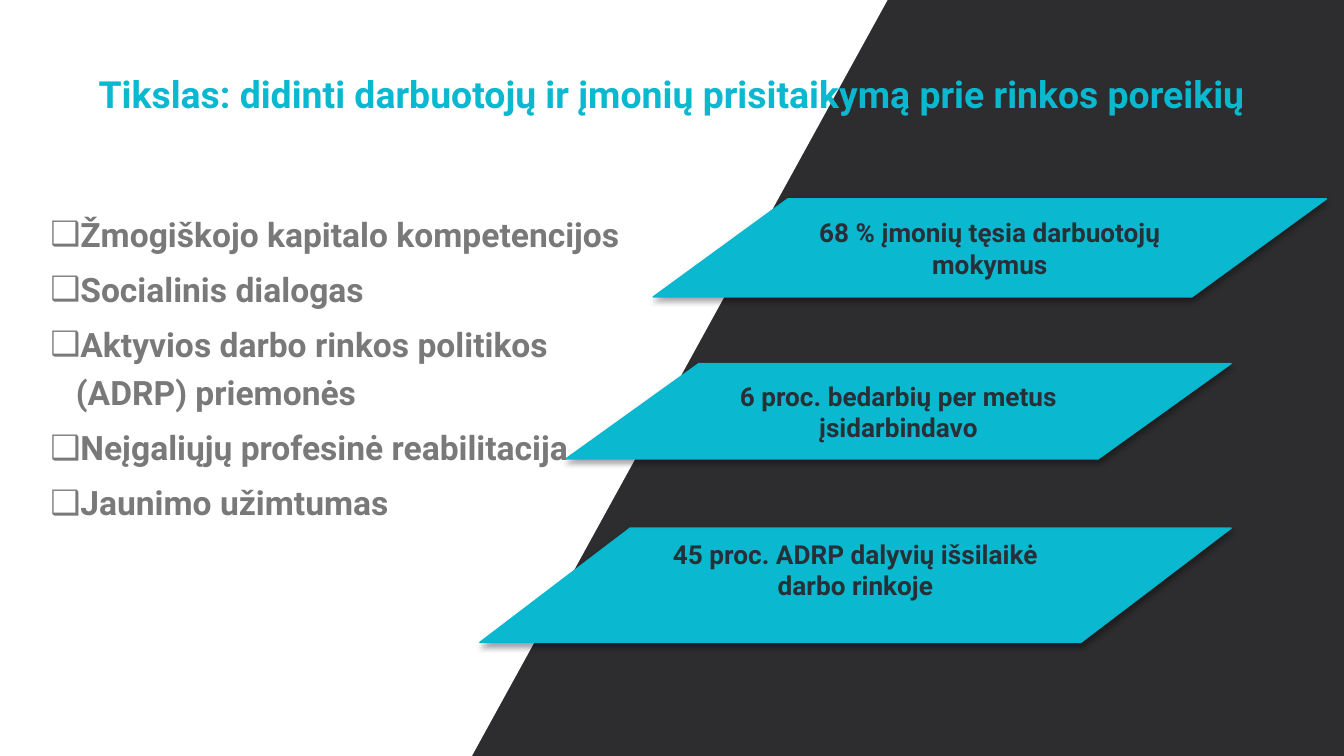
from lxml import etree
from pptx import Presentation
from pptx.dml.color import RGBColor
from pptx.enum.shapes import MSO_SHAPE
from pptx.enum.text import MSO_ANCHOR, MSO_AUTO_SIZE, PP_ALIGN
from pptx.oxml import parse_xml
from pptx.oxml.ns import qn
from pptx.util import Inches, Pt

DATA, TRIANGLE = MSO_SHAPE.FLOWCHART_DATA, MSO_SHAPE.RIGHT_TRIANGLE
TOP, MIDDLE = MSO_ANCHOR.TOP, MSO_ANCHOR.MIDDLE
LEFT, CENTER = PP_ALIGN.LEFT, PP_ALIGN.CENTER
NO_FIT = MSO_AUTO_SIZE.NONE

THEME = {
    "dark": RGBColor.from_string("2D2C2E"),
    "white": RGBColor.from_string("FFFFFF"),
    "accent": RGBColor.from_string("0AB8D0"),
    "edge": RGBColor.from_string("05B8D0"),
    "title": {"name": "Roboto", "size": Pt(20), "bold": True, "color": "0AB8D0"},
    "body": {"name": "Roboto", "size": Pt(18), "bold": True, "color": "797979"},
    "result": {"name": "Roboto", "size": Pt(14), "bold": True, "color": "272F37"},
}
SHADOW = (
    '<a:outerShdw xmlns:a="http://schemas.openxmlformats.org/drawingml/2006/main"'
    f' blurRad="{Pt(3.1)}" dist="{Pt(1.8)}" dir="5400000" rotWithShape="0">'
    '<a:srgbClr val="000000"><a:alpha val="35000"/></a:srgbClr></a:outerShdw>'
)

COLS = 100
prs = Presentation()
prs.slide_width = Inches(10)
prs.slide_height = prs.slide_width * 9 // 16
CELL = prs.slide_width / COLS


def grid(*cells):
    return [round(c * CELL) for c in cells]


def write(p, text, style, align):
    p.alignment = align
    r = p.add_run()
    r.text = text
    for key, value in THEME[style].items():
        if key == "color":
            r.font.color.rgb = RGBColor.from_string(value)
        else:
            setattr(r.font, key, value)


s = prs.slides.add_slide(prs.slide_layouts[1])
s.background.fill.solid()
s.background.fill.fore_color.rgb = THEME["dark"]
title, body = s.placeholders[0], s.placeholders[1]

panel = s.shapes.add_shape(TRIANGLE, *grid(-9.7, -11.5, 105.9, 105.9))
panel.rotation = 343.8
panel.element.spPr.find(qn("a:xfrm")).set("flipV", "1")
panel.shadow.inherit = False
panel.fill.solid()
panel.fill.fore_color.rgb = THEME["white"]
panel.line.fill.background()
title.element.addprevious(panel.element)

title.left, title.top, title.width, title.height = grid(5, 2.3, 90, 9.4)
tf = title.text_frame
for key, value in {"word_wrap": True, "auto_size": NO_FIT, "vertical_anchor": MIDDLE,
                   "margin_left": Inches(0.07), "margin_right": Inches(0.07),
                   "margin_top": Inches(0.04), "margin_bottom": Inches(0.04)}.items():
    setattr(tf, key, value)
write(tf.paragraphs[0], "Tikslas: didinti darbuotojų ir įmonių prisitaikymą prie rinkos poreikių",
      "title", CENTER)

FIRST_ROW, PITCH = 14.8, 12.25
results = [
    ("68 % įmonių tęsia darbuotojų mokymus", 48.6, 50.1, 7.3, 0.05),
    ("6 proc. bedarbių per metus įsidarbindavo", 42.1, 49.5, 7.1, 0.05),
    ("45 proc. ADRP dalyvių išsilaikė darbo rinkoje", 35.7, 55.9, 8.5, 0.28),
]
for i, (text, col, width, height, bottom) in enumerate(results):
    sp = s.shapes.add_shape(DATA, *grid(col, FIRST_ROW + i * PITCH, width, height))
    sp.fill.solid()
    sp.fill.fore_color.rgb = THEME["accent"]
    sp.line.color.rgb = THEME["edge"]
    sp.line.width = Pt(0.75)
    sp.shadow.inherit = False
    sp.element.spPr.find(qn("a:effectLst")).append(parse_xml(SHADOW))
    tf = sp.text_frame
    tf.word_wrap = True
    tf.vertical_anchor = MIDDLE
    tf.margin_bottom = Inches(bottom)
    write(tf.paragraphs[0], text, "result", CENTER)

body.left, body.top, body.width, body.height = grid(2.75, FIRST_ROW, 47.2, 31.7)
s.shapes[-1].element.addnext(body.element)
tf = body.text_frame
for key, value in {"word_wrap": True, "auto_size": NO_FIT, "vertical_anchor": TOP}.items():
    setattr(tf, key, value)
topics = [
    "Žmogiškojo kapitalo kompetencijos",
    "Socialinis dialogas",
    "Aktyvios darbo rinkos politikos (ADRP) priemonės",
    "Neįgaliųjų profesinė reabilitacija",
    "Jaunimo užimtumas",
]
for i, text in enumerate(topics):
    p = tf.add_paragraph() if i else tf.paragraphs[0]
    write(p, text, "body", LEFT)
    p.line_spacing = 1.2
    p.space_before = Pt(3.6)
    pPr = p._p.get_or_add_pPr()
    pPr.set("marL", str(Inches(0.19)))
    pPr.set("indent", str(-Inches(0.19)))
    etree.SubElement(pPr, qn("a:buChar")).set("char", "❑")

prs.save("out.pptx")
